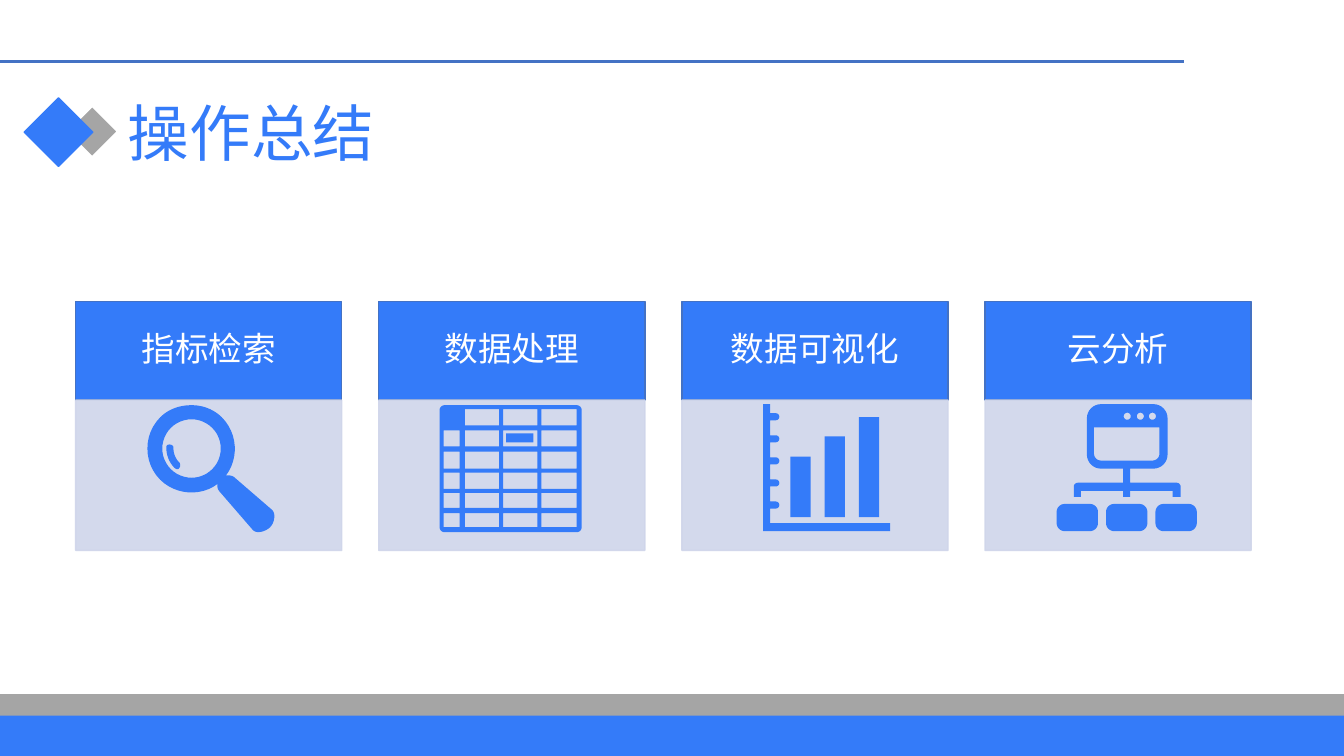
import math

import pptx
import pptx.dml.color
import pptx.enum.shapes
import pptx.enum.text
import pptx.oxml
import pptx.oxml.ns
import pptx.util
from pptx.util import Inches

COLORS = {"blue": "347BF9", "gray": "A5A5A5", "edge": "4472C4",
          "pale": "CFD5EA", "white": "FFFFFF"}
SHAPE = pptx.enum.shapes.MSO_SHAPE
ALIGN = pptx.enum.text.PP_ALIGN
CARDS = ["指标检索", "数据处理", "数据可视化", "云分析"]


def rgb(name):
    return pptx.dml.color.RGBColor.from_string(COLORS[name])


def set_alpha(fill, percent):
    color = fill._xPr.find(".//" + pptx.oxml.ns.qn("a:srgbClr"))
    alpha = pptx.oxml.parse_xml(
        f'<a:alpha {pptx.oxml.ns.nsdecls("a")} val="{percent * 1000}"/>')
    color.append(alpha)


def add_box(slide, kind, x, y, w, h, fill, line=None, width=1, alpha=None):
    sp = slide.shapes.add_shape(kind, Inches(x), Inches(y), Inches(w), Inches(h))
    sp.shadow.inherit = False
    sp.fill.solid()
    sp.fill.fore_color.rgb = rgb(fill)
    if line:
        sp.line.color.rgb = rgb(line)
        sp.line.width = pptx.util.Pt(width)
    else:
        sp.line.fill.background()
    if alpha:
        set_alpha(sp.fill, alpha)
        set_alpha(sp.line.fill, alpha)
    return sp


def write(sp, text, size, font, color, align=ALIGN.LEFT, insets=(0.1, 0.05)):
    tf = sp.text_frame
    tf.word_wrap = True
    tf.vertical_anchor = pptx.enum.text.MSO_ANCHOR.MIDDLE
    tf.margin_left = tf.margin_right = Inches(insets[0])
    tf.margin_top = tf.margin_bottom = Inches(insets[1])
    p = tf.paragraphs[0]
    p.alignment = align
    p.line_spacing = 0.9
    r = p.add_run()
    r.text = text
    r.font.size = pptx.util.Pt(size)
    r.font.name = font
    r.font.color.rgb = rgb(color)
    r.font._element.append(pptx.oxml.parse_xml(
        f'<a:ea {pptx.oxml.ns.nsdecls("a")} typeface="{font}"/>'))


def add_rule(slide, x1, y1, x2, y2):
    line = slide.shapes.add_connector(
        pptx.enum.shapes.MSO_CONNECTOR.STRAIGHT,
        Inches(x1), Inches(y1), Inches(x2), Inches(y2))
    line.line.color.rgb = rgb("edge")
    line.line.width = pptx.util.Pt(2.25)
    line._element.spPr.append(pptx.oxml.parse_xml(
        f'<a:effectLst {pptx.oxml.ns.nsdecls("a")}/>'))


def box(x1, y1, x2, y2):
    return [(x1, y1), (x2, y1), (x2, y2), (x1, y2)]


def arc(cx, cy, radius, start, end, steps=8):
    """Points on an arc; angles in degrees, clockwise from the right."""
    angles = [math.radians(start + (end - start) * i / steps) for i in range(steps + 1)]
    return [(cx + radius * math.cos(a), cy + radius * math.sin(a)) for a in angles]


def circle(cx, cy, radius):
    return arc(cx, cy, radius, 0, 360, 48)


def rounded(x1, y1, x2, y2, radius, top_radius=None):
    top = radius if top_radius is None else top_radius
    return (arc(x1 + top, y1 + top, top, 180, 270)
            + arc(x2 - top, y1 + top, top, 270, 360)
            + arc(x2 - radius, y2 - radius, radius, 0, 90)
            + arc(x1 + radius, y2 - radius, radius, 90, 180))


def outline(start, *steps):
    """Flatten steps: pairs are line ends, sixes are cubic curves."""
    points = [start]
    for step in steps:
        if len(step) == 2:
            points.append(step)
            continue
        controls = [points[-1], step[:2], step[2:4], step[4:]]
        for i in range(1, 13):
            t = i / 12
            weights = [(1 - t) ** 3, 3 * t * (1 - t) ** 2, 3 * t * t * (1 - t), t ** 3]
            points.append(tuple(sum(k * c[axis] for k, c in zip(weights, controls))
                                for axis in (0, 1)))
    return points


def add_icon(slide, contours):
    """Draw contours as one shape; inner contours become holes."""
    scaled = [[(Inches(x), Inches(y)) for x, y in c] for c in contours]
    builder = slide.shapes.build_freeform(*scaled[0][0])
    for i, points in enumerate(scaled):
        if i:
            builder.move_to(*points[0])
        builder.add_line_segments(points[1:], close=True)
    sp = builder.convert_to_shape()
    sp.shadow.inherit = False
    sp.fill.solid()
    sp.fill.fore_color.rgb = rgb("blue")
    sp.line.fill.background()


def magnifier():
    glint = outline(
        (1.68, 4.41), (1.7, 4.41, 1.72, 4.42, 1.72, 4.44),
        (1.72, 4.5, 1.74, 4.55, 1.78, 4.59), (1.79, 4.6, 1.79, 4.63, 1.78, 4.64),
        (1.77, 4.66, 1.75, 4.66, 1.73, 4.64), (1.68, 4.59, 1.65, 4.52, 1.65, 4.44),
        (1.65, 4.42, 1.66, 4.41, 1.68, 4.41))
    body = outline(
        (1.9, 4.02), (2.01, 4.02, 2.12, 4.06, 2.2, 4.14),
        (2.36, 4.3, 2.37, 4.55, 2.24, 4.72), (2.27, 4.71, 2.31, 4.72, 2.33, 4.74),
        (2.7, 5.06), (2.74, 5.1, 2.72, 5.19, 2.68, 5.23),
        (2.64, 5.27, 2.55, 5.3, 2.51, 5.26), (2.19, 4.89),
        (2.16, 4.86, 2.15, 4.83, 2.16, 4.8), (1.99, 4.93, 1.74, 4.91, 1.59, 4.76),
        (1.42, 4.59, 1.42, 4.31, 1.59, 4.14), (1.67, 4.06, 1.78, 4.02, 1.9, 4.02))
    return [body, circle(1.9, 4.45, 0.29), glint]


def spreadsheet():
    columns = [(4.4, 4.56), (4.61, 4.95), (4.99, 5.33), (5.37, 5.72)]
    rows = [(4.06, 4.22), (4.27, 4.43), (4.48, 4.65),
            (4.69, 4.85), (4.89, 5.04), (5.09, 5.23)]
    cells = [box(x1, y1, x2, y2) for y1, y2 in rows for x1, x2 in columns]
    return [rounded(4.36, 4.02, 5.77, 5.28, 0.05), *cells[1:], box(5.02, 4.3, 5.29, 4.39)]


def bar_chart():
    axes = [(7.57, 4.01), (7.64, 4.01)]
    for i in range(5):
        y = 4.135 + 0.219 * i
        axes += [(7.64, y - 0.035), *arc(7.695, y, 0.035, -90, 90), (7.64, y + 0.035)]
    axes += [(7.64, 5.19), (8.83, 5.19), (8.83, 5.27), (7.57, 5.27)]
    tops = [4.53, 4.33, 4.14]
    bars = [box(7.84 + 0.34 * i, y, 8.04 + 0.34 * i, 5.13) for i, y in enumerate(tops)]
    return [axes, *bars]


def network():
    nodes = [rounded(x, 5, x + 0.41, 5.27, 0.08) for x in (10.48, 10.97, 11.46)]
    dots = [circle(x, 4.13, 0.035) for x in (11.18, 11.31, 11.43)]
    screen = rounded(10.85, 4.24, 11.5, 4.57, 0.07, top_radius=0)
    tree = [(11.14, 4.65), (11.21, 4.65), (11.21, 4.79), *arc(11.67, 4.83, 0.04, 270, 360),
            (11.71, 4.93), (11.63, 4.93), (11.63, 4.87), (11.21, 4.87), (11.21, 4.93),
            (11.14, 4.93), (11.14, 4.87), (10.72, 4.87), (10.72, 4.93), (10.65, 4.93),
            *arc(10.69, 4.83, 0.04, 180, 270), (11.14, 4.79)]
    return [rounded(10.78, 4.01, 11.58, 4.65, 0.14), screen, *dots, tree, *nodes]


def add_card(slide, x, label):
    header = add_box(slide, SHAPE.RECTANGLE, x, 2.99, 2.64, 0.98, "blue", "edge")
    write(header, label, 24, "Arial", "white", ALIGN.CENTER, (0.19, 0.11))
    add_box(slide, SHAPE.RECTANGLE, x, 3.97, 2.64, 1.49, "pale", "pale", alpha=90)


def add_frame(slide):
    add_box(slide, SHAPE.RECTANGLE, 0, 6.9, 13.33, 0.6, "gray", "gray", 1.5)
    add_box(slide, SHAPE.RECTANGLE, 0, 7.1, 13.33, 0.4, "blue")
    add_rule(slide, 0, 0.61, 11.74, 0.61)
    add_box(slide, SHAPE.DIAMOND, 0.66, 1.05, 0.51, 0.51, "gray", "white", 1.5)
    add_box(slide, SHAPE.DIAMOND, 0.24, 0.97, 0.68, 0.68, "blue", "blue")


def main():
    prs = pptx.Presentation()
    prs.slide_width, prs.slide_height = Inches(13.33), Inches(7.5)
    slide = prs.slides.add_slide(prs.slide_layouts[6])
    add_frame(slide)
    title = slide.shapes.add_textbox(Inches(1.17), Inches(0.85), Inches(11.25), Inches(1))
    write(title, "操作总结", 44, "Noto Sans CJK SC", "blue")
    pitch = (9.77 - 0.75) / 3
    for i, label in enumerate(CARDS):
        add_card(slide, 0.75 + pitch * i, label)
    for contours in (magnifier(), spreadsheet(), bar_chart(), network()):
        add_icon(slide, contours)
    prs.save("out.pptx")


if __name__ == "__main__":
    main()
